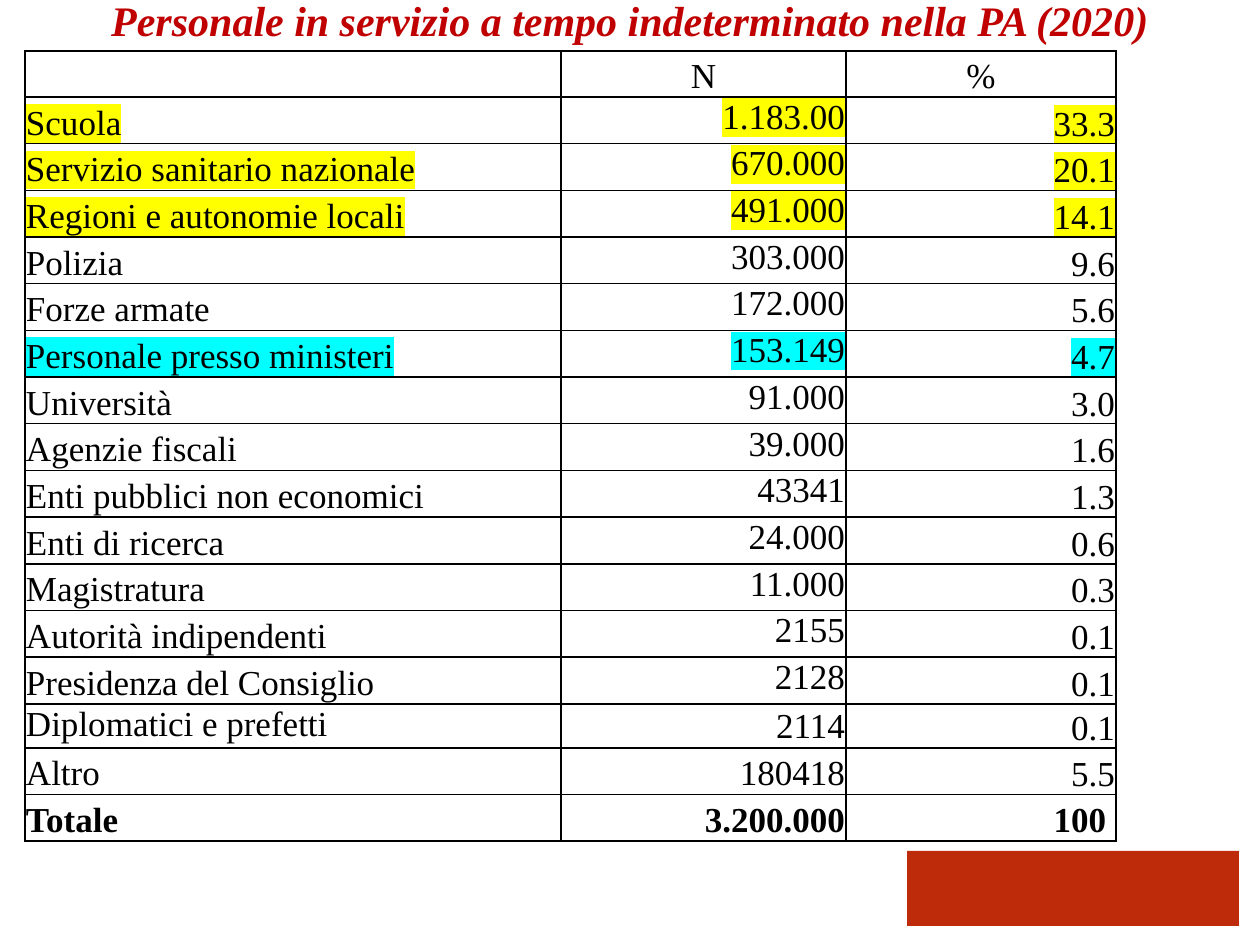
from lxml.etree import SubElement
from pptx import Presentation
from pptx.dml.color import RGBColor
from pptx.enum.shapes import MSO_SHAPE
from pptx.enum.text import MSO_ANCHOR, MSO_AUTO_SIZE, PP_ALIGN
from pptx.oxml import parse_xml
from pptx.oxml.ns import nsdecls, qn
from pptx.util import Pt

SCALE = 914400 / 126
BLACK = RGBColor(0x00, 0x00, 0x00)
TITLE_RED = RGBColor(0xC0, 0x00, 0x00)
BLOCK_RED = RGBColor(0xBD, 0x2B, 0x0B)
YELLOW = RGBColor(0xFF, 0xFF, 0x00)
CYAN = RGBColor(0x00, 0xFF, 0xFF)

TITLE = "Personale in servizio a tempo indeterminato nella PA (2020)"
FONT = "Times New Roman"
COLUMN_WIDTHS = [536, 285, 270]
HEADER_HEIGHT = 46
ROW_HEIGHT = 607 / 13
COMPACT_HEIGHT = 44
COMPACT_LABEL = "Diplomatici e prefetti"
ROWS = [
    ("", "N", "%"),
    ("Scuola", "1.183.00", "33.3"),
    ("Servizio sanitario nazionale", "670.000", "20.1"),
    ("Regioni e autonomie locali", "491.000", "14.1"),
    ("Polizia", "303.000", "9.6"),
    ("Forze armate", "172.000", "5.6"),
    ("Personale presso ministeri", "153.149", "4.7"),
    ("Università", "91.000", "3.0"),
    ("Agenzie fiscali", "39.000", "1.6"),
    ("Enti pubblici non economici", "43341", "1.3"),
    ("Enti di ricerca", "24.000", "0.6"),
    ("Magistratura", "11.000", "0.3"),
    ("Autorità indipendenti", "2155", "0.1"),
    ("Presidenza del Consiglio", "2128", "0.1"),
    (COMPACT_LABEL, "2114", "0.1"),
    ("Altro", "180418", "5.5"),
    ("Totale", "3.200.000", "100 "),
]
ROW_HEIGHTS = {"": HEADER_HEIGHT, COMPACT_LABEL: COMPACT_HEIGHT}
HIGHLIGHTS = {
    "Scuola": YELLOW,
    "Servizio sanitario nazionale": YELLOW,
    "Regioni e autonomie locali": YELLOW,
    "Personale presso ministeri": CYAN,
}


def px(length):
    return round(length * SCALE)


def set_attributes(target, values):
    for name, value in values.items():
        setattr(target, name, value)


def place(shape, left, top, width, height):
    box = {"left": left, "top": top, "width": width, "height": height}
    set_attributes(shape, {name: px(length) for name, length in box.items()})


def write_run(paragraph, text, size, color, **values):
    run = paragraph.add_run()
    run.text = text
    set_attributes(run.font, {"name": FONT, "size": Pt(size), **values})
    run.font.color.rgb = color
    return run


def highlight_run(run, color):
    properties = run.font._element
    highlight = SubElement(properties, qn("a:highlight"))
    SubElement(highlight, qn("a:srgbClr"), val=str(color))
    properties.find(qn("a:solidFill")).addnext(highlight)


def add_borders(cell):
    properties = cell._tc.get_or_add_tcPr()
    for side in ("lnL", "lnR", "lnT", "lnB"):
        properties.append(parse_xml(
            f'<a:{side} {nsdecls("a")} w="{Pt(1)}"><a:solidFill>'
            f'<a:srgbClr val="{BLACK}"/></a:solidFill></a:{side}>'))


def cell_layout(label, column):
    if label == "":
        return PP_ALIGN.CENTER, MSO_ANCHOR.BOTTOM, 1
    if column == 0:
        if label == COMPACT_LABEL:
            return PP_ALIGN.LEFT, MSO_ANCHOR.TOP, 0
        return PP_ALIGN.LEFT, MSO_ANCHOR.BOTTOM, 1
    if label == "Totale" or (label == "Altro" and column == 1):
        return PP_ALIGN.RIGHT, MSO_ANCHOR.BOTTOM, 1
    if column == 2:
        return PP_ALIGN.RIGHT, MSO_ANCHOR.BOTTOM, 0
    if label == COMPACT_LABEL:
        return PP_ALIGN.RIGHT, MSO_ANCHOR.MIDDLE, 0
    return PP_ALIGN.RIGHT, MSO_ANCHOR.TOP, 0


def fill_cell(cell, text, label, column):
    alignment, anchor, bottom = cell_layout(label, column)
    set_attributes(cell, {
        "margin_left": px(1), "margin_right": px(1), "margin_top": px(1),
        "margin_bottom": px(bottom), "vertical_anchor": anchor,
    })
    add_borders(cell)
    cell.fill.background()
    paragraph = cell.text_frame.paragraphs[0]
    paragraph.alignment = alignment
    run = write_run(paragraph, text, 20, BLACK, bold=label == "Totale")
    if label in HIGHLIGHTS:
        highlight_run(run, HIGHLIGHTS[label])


def add_staff_table(slide):
    heights = [ROW_HEIGHTS.get(row[0], ROW_HEIGHT) for row in ROWS]
    frame = slide.shapes.add_table(
        len(ROWS), len(COLUMN_WIDTHS), px(25), px(51),
        px(sum(COLUMN_WIDTHS)), px(sum(heights)))
    table = frame.table
    set_attributes(table, {"first_row": False, "horz_banding": False})
    for column, width in zip(table.columns, COLUMN_WIDTHS):
        column.width = px(width)
    for row, height, texts in zip(table.rows, heights, ROWS):
        row.height = px(height)
        for column, text in enumerate(texts):
            fill_cell(row.cells[column], text, texts[0], column)


def add_color_block(slide):
    shape = slide.shapes.add_shape(
        MSO_SHAPE.RECTANGLE, px(907), px(851), px(332), px(75))
    shape.shadow.inherit = False
    shape.fill.solid()
    shape.fill.fore_color.rgb = BLOCK_RED
    shape.line.fill.background()


def write_title(slide):
    title = slide.shapes.title
    place(title, 0, -12, 1260, 63)
    set_attributes(title.text_frame, {
        "word_wrap": True, "vertical_anchor": MSO_ANCHOR.TOP,
        "auto_size": MSO_AUTO_SIZE.SHAPE_TO_FIT_TEXT,
    })
    paragraph = title.text_frame.paragraphs[0]
    paragraph.alignment = PP_ALIGN.CENTER
    write_run(paragraph, TITLE, 24, TITLE_RED, bold=True, italic=True)


def main():
    presentation = Presentation()
    set_attributes(presentation,
                   {"slide_width": px(1260), "slide_height": px(945)})
    slide = presentation.slides.add_slide(presentation.slide_layouts[5])
    add_color_block(slide)
    add_staff_table(slide)
    write_title(slide)
    presentation.save("out.pptx")


if __name__ == "__main__":
    main()
